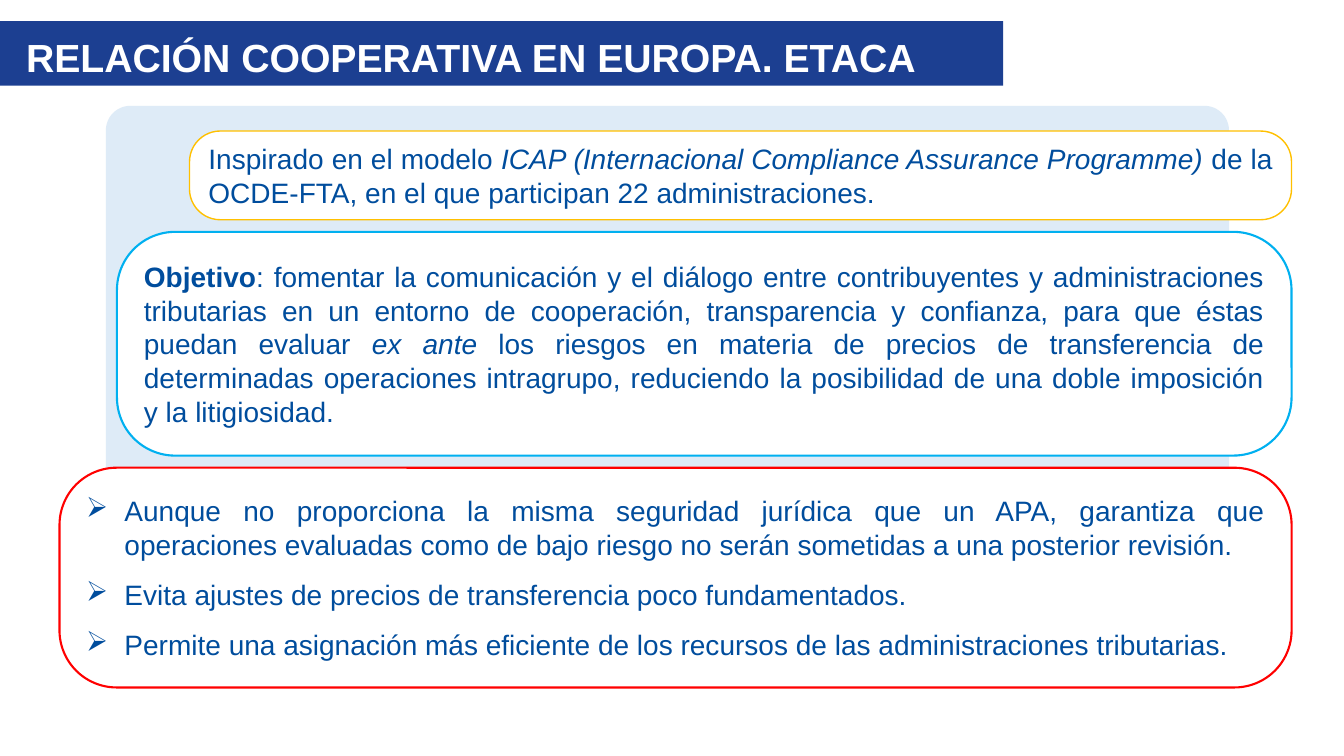
from dataclasses import dataclass

from lxml import etree
from pptx import Presentation, util as u
from pptx.dml.color import RGBColor
from pptx.enum import shapes, text
from pptx.oxml import ns


@dataclass(frozen=True)
class Theme:
    font: str = "Arial"
    title_size: int = 28
    body_size: int = 20
    white: str = "FFFFFF"
    body: str = "004D9D"
    banner: str = "1C3F91"
    panel: str = "DEEBF7"
    amber: str = "FFC000"
    cyan: str = "00B0F0"
    red: str = "FF0000"


@dataclass(frozen=True)
class Run:
    text: str
    bold: bool = False
    italic: bool = False


@dataclass(frozen=True)
class Card:
    left: float
    top: float
    height: float
    corner: float
    line: str
    line_width: float
    paragraphs: list[list[Run]]
    bulleted: bool = False


THEME = Theme()
CARDS_RIGHT = 12.81
BULLET_INDENT = 0.38

CARDS = [
    Card(1.88, 1.3, 0.88, 0.347, THEME.amber, 1, [[
        Run("Inspirado en el modelo "),
        Run("ICAP (Internacional Compliance Assurance Programme) ", italic=True),
        Run("de la OCDE-FTA, en el que participan 22 administraciones."),
    ]]),
    Card(1.16, 2.3, 2.22, 0.26, THEME.cyan, 1.5, [[
        Run("Objetivo", bold=True),
        Run(": fomentar la comunicación y el diálogo entre contribuyentes y "
            "administraciones tributarias en un entorno de cooperación, "
            "transparencia y confianza, para que éstas puedan evaluar "),
        Run("ex ante", italic=True),
        Run(" los riesgos en materia de precios de transferencia de determinadas "
            "operaciones intragrupo, reduciendo la posibilidad de una doble "
            "imposición y la litigiosidad."),
    ]]),
    Card(0.59, 4.64, 2.18, 0.26, THEME.red, 1.5, [
        [Run("Aunque no proporciona la misma seguridad jurídica que un APA, "
             "garantiza que operaciones evaluadas como de bajo riesgo no serán "
             "sometidas a una posterior revisión.")],
        [Run("Evita ajustes de precios de transferencia poco fundamentados.")],
        [Run("Permite una asignación más eficiente de los recursos de las "
             "administraciones tributarias.")],
    ], bulleted=True),
]


def style_font(font, size: float, color: str, bold: bool = False,
               italic: bool = False) -> None:
    font.name = THEME.font
    font.size = u.Pt(size)
    font.color.rgb = RGBColor.from_string(color)
    font.bold = bold
    font.italic = italic


def add_block(s, kind, left: float, top: float, width: float, height: float, fill: str):
    sp = s.shapes.add_shape(kind, *map(u.Inches, (left, top, width, height)))
    sp.shadow.inherit = False
    sp.fill.solid()
    sp.fill.fore_color.rgb = RGBColor.from_string(fill)
    sp.line.fill.background()
    return sp


def add_bullet(p) -> None:
    pPr = p._p.get_or_add_pPr()
    pPr.set("marL", str(u.Inches(BULLET_INDENT)))
    pPr.set("indent", str(-u.Inches(BULLET_INDENT)))
    etree.SubElement(pPr, ns.qn("a:buChar")).set("char", "➢")


def add_card(s, card: Card) -> None:
    sp = add_block(s, shapes.MSO_SHAPE.ROUNDED_RECTANGLE, card.left, card.top,
                   CARDS_RIGHT - card.left, card.height, THEME.white)
    sp.adjustments[0] = card.corner
    sp.line.color.rgb = RGBColor.from_string(card.line)
    sp.line.width = u.Pt(card.line_width)
    tf = sp.text_frame
    tf.word_wrap = True
    tf.vertical_anchor = text.MSO_ANCHOR.MIDDLE
    for i, runs in enumerate(card.paragraphs):
        p = tf.add_paragraph() if i else tf.paragraphs[0]
        p.alignment = text.PP_ALIGN.JUSTIFY
        if i:
            p.space_before = u.Pt(12)
        if card.bulleted:
            add_bullet(p)
        for run in runs:
            r = p.add_run()
            r.text = run.text
            style_font(r.font, THEME.body_size, THEME.body, run.bold, run.italic)


def add_title(s, title: str) -> None:
    add_block(s, shapes.MSO_SHAPE.RECTANGLE, 0, 0.21, 9.95, 0.64, THEME.banner)
    tb = s.shapes.add_textbox(*map(u.Inches, (0, 0.28, 9.34, 1.04)))
    tf = tb.text_frame
    tf.word_wrap = True
    tf.text = title
    p = tf.paragraphs[0]
    p.alignment = text.PP_ALIGN.CENTER
    style_font(p.runs[0].font, THEME.title_size, THEME.white, bold=True)


def main() -> None:
    prs = Presentation()
    prs.slide_width, prs.slide_height = u.Inches(13.33), u.Inches(7.5)
    s = prs.slides.add_slide(prs.slide_layouts[6])

    # Background panel
    panel = add_block(s, shapes.MSO_SHAPE.ROUNDED_RECTANGLE,
                      1.05, 1.05, 11.14, 5.53, THEME.panel)
    panel.adjustments[0] = 0.044

    # Text cards
    for card in CARDS:
        add_card(s, card)

    # Title banner
    add_title(s, "RELACIÓN COOPERATIVA EN EUROPA. ETACA")

    prs.save("out.pptx")


if __name__ == "__main__":
    main()
